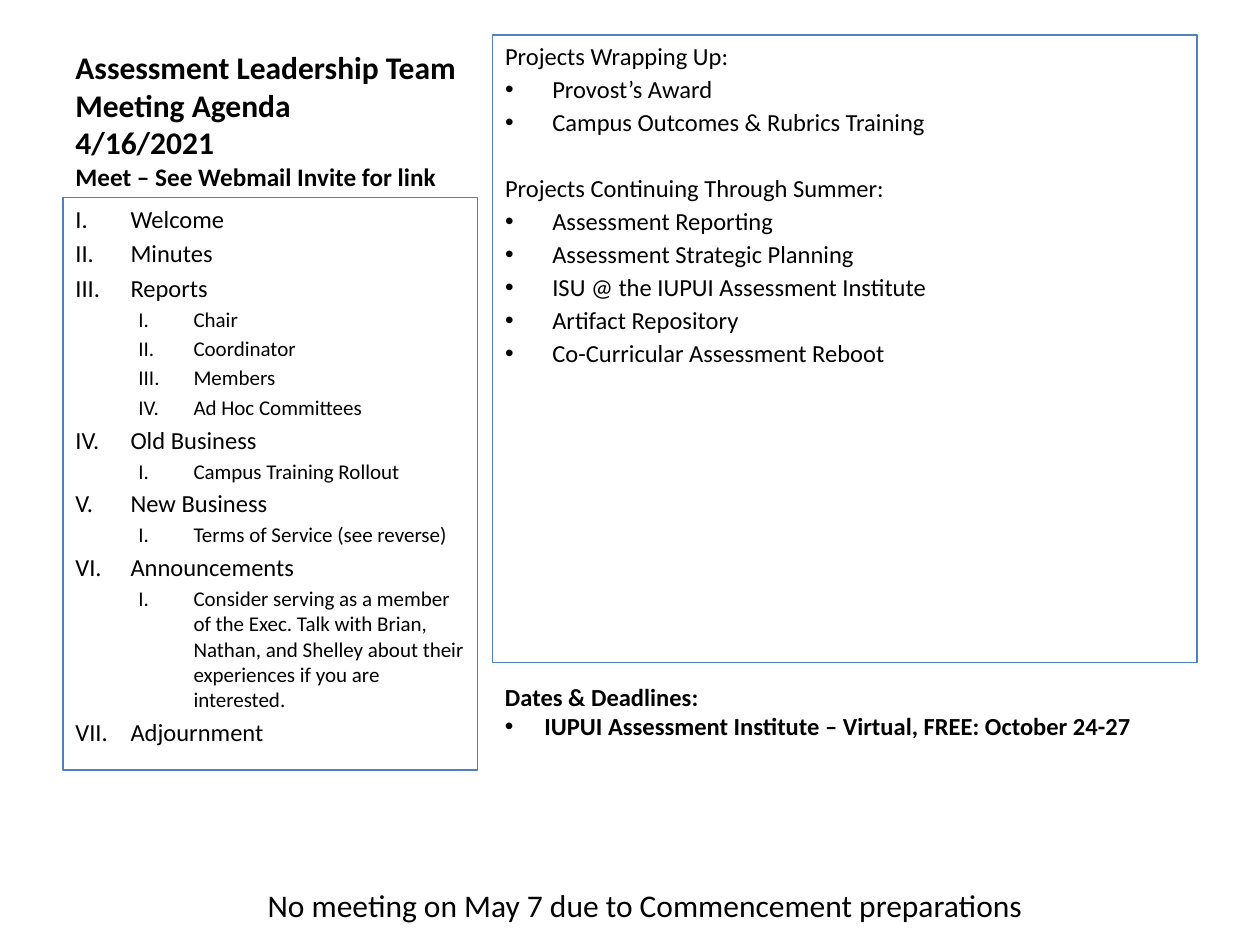
"""Build the one-page meeting agenda slide."""
from dataclasses import dataclass

from lxml import etree
from pptx import Presentation
from pptx.dml.color import RGBColor
from pptx.enum.text import MSO_ANCHOR, PP_ALIGN
from pptx.oxml.ns import qn
from pptx.util import Pt

BLACK = RGBColor(0, 0, 0)
BLUE = RGBColor(0x4F, 0x81, 0xBD)
TOP, BOTTOM = MSO_ANCHOR.TOP, MSO_ANCHOR.BOTTOM
LEFT, CENTER = PP_ALIGN.LEFT, PP_ALIGN.CENTER
FONT = "Calibri"
DOT = ("buChar", "char", "•")
ROMAN = ("buAutoNum", "type", "romanUcPeriod")


@dataclass
class Box:
    left: float
    top: float
    width: float
    height: float
    border: bool = False
    anchor: MSO_ANCHOR = TOP


@dataclass
class Para:
    lines: list[str]
    sizes: list[float]
    before: float = 0
    bold: bool = False
    bullet: tuple[str, str, str] | None = None
    margin: float = 0
    hang: float = 0
    level: int = 0
    align: PP_ALIGN = LEFT


def add_para(p, para: Para) -> None:
    """Fill one paragraph, one run per line."""
    p.level = para.level
    p.alignment = para.align
    p.space_before = Pt(para.before)
    if para.bullet:
        tag, key, value = para.bullet
        pPr = p._p.get_or_add_pPr()
        pPr.set("marL", str(Pt(para.margin)))
        pPr.set("indent", str(-Pt(para.hang)))
        etree.SubElement(pPr, qn("a:buFont")).set("typeface", "Arial" if para.bullet == DOT else FONT)
        etree.SubElement(pPr, qn(f"a:{tag}")).set(key, value)
    for i, (line, size) in enumerate(zip(para.lines, para.sizes)):
        if i:
            p.add_line_break()
        r = p.add_run()
        r.text = line
        r.font.name = FONT
        r.font.size = Pt(size)
        r.font.bold = para.bold
        r.font.color.rgb = BLACK


def add_box(s, box: Box, paras: list[Para]) -> None:
    """Draw a text box with its paragraphs."""
    sp = s.shapes.add_textbox(Pt(box.left), Pt(box.top), Pt(box.width), Pt(box.height))
    if box.border:
        sp.line.color.rgb = BLUE
        sp.line.width = Pt(0.75)
    tf = sp.text_frame
    tf.word_wrap = True
    tf.vertical_anchor = box.anchor
    for i, para in enumerate(paras):
        add_para(tf.add_paragraph() if i else tf.paragraphs[0], para)


def agenda_paras(items: list[tuple[str, list[str]]]) -> list[Para]:
    """Number the agenda items and their sub-items."""
    paras = []
    for item, subs in items:
        paras.append(Para([item], [14], 2.8 if paras else 0, False, ROMAN, 31.5, 31.5))
        paras += [Para([sub], [12], 2.4, False, ROMAN, 67.5, 31.5, 1) for sub in subs]
    return paras


def project_paras(groups: list[tuple[str, list[str]]]) -> list[Para]:
    """Set each heading above its bulleted projects."""
    paras = []
    for heading, projects in groups:
        paras.append(Para([heading], [14], 21 if paras else 0))
        paras += [Para([project], [14], 2, False, DOT, 27, 27) for project in projects]
    return paras


TITLE = [Para(["Assessment Leadership Team", "Meeting Agenda", "4/16/2021",
               "Meet – See Webmail Invite for link"], [18, 18, 18, 14.4], bold=True)]
AGENDA = [
    ("Welcome", []),
    ("Minutes", []),
    ("Reports", ["Chair", "Coordinator", "Members", "Ad Hoc Committees"]),
    ("Old Business", ["Campus Training Rollout"]),
    ("New Business", ["Terms of Service (see reverse)"]),
    ("Announcements", ["Consider serving as a member of the Exec. Talk with Brian, Nathan, "
                       "and Shelley about their experiences if you are interested."]),
    ("Adjournment", []),
]
PROJECTS = [
    ("Projects Wrapping Up:", ["Provost’s Award", "Campus Outcomes & Rubrics Training"]),
    ("Projects Continuing Through Summer:", [
        "Assessment Reporting", "Assessment Strategic Planning",
        "ISU @ the IUPUI Assessment Institute", "Artifact Repository",
        "Co-Curricular Assessment Reboot"]),
]
DATES = [
    Para(["Dates & Deadlines:"], [14], bold=True),
    Para(["IUPUI Assessment Institute – Virtual, FREE: October 24-27"], [14],
         0, True, DOT, 22.5, 22.5),
]
NOTICE = [Para(["No meeting on May 7 due to Commencement preparations"], [18], align=CENTER)]


def main() -> None:
    """Build and save the slide."""
    prs = Presentation()
    prs.slide_width, prs.slide_height = Pt(720), Pt(540)
    s = prs.slides.add_slide(prs.slide_layouts[6])
    add_box(s, Box(36, 21.6, 237, 91.4, anchor=BOTTOM), TITLE)
    add_box(s, Box(281.5, 20, 402.5, 358.5, border=True), project_paras(PROJECTS))
    add_box(s, Box(36, 113, 237, 327, border=True), agenda_paras(AGENDA))
    add_box(s, Box(281.5, 386, 420.5, 41), DATES)
    add_box(s, Box(36, 502.5, 665.3, 29), NOTICE)
    prs.save("out.pptx")


if __name__ == "__main__":
    main()
